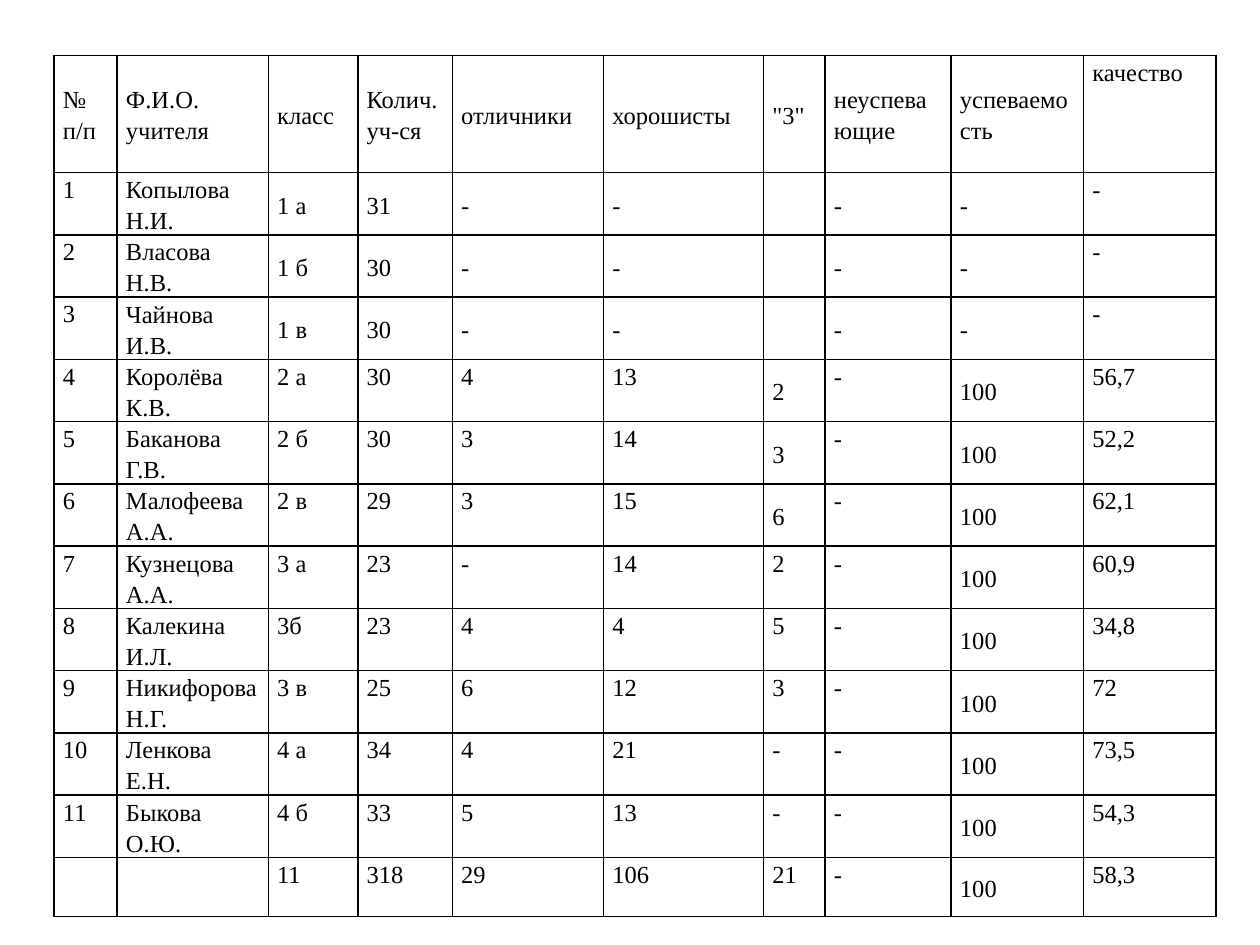
from pptx import Presentation
from pptx.dml.color import RGBColor
from pptx.enum.text import MSO_ANCHOR
from pptx.oxml import parse_xml
from pptx.oxml.ns import nsdecls
from pptx.util import Inches, Pt

# Content
HEADINGS = ("№ п/п", "Ф.И.О. учителя", "класс", "Колич. уч-ся", "отличники",
            "хорошисты", '"3"', "неуспевающие", "успеваемость", "качество")
CLASSES = [
    ("1", "Копылова Н.И.", "1 а", "31", "-", "-", "", "-", "-", "-"),
    ("2", "Власова Н.В.", "1 б", "30", "-", "-", "", "-", "-", "-"),
    ("3", "Чайнова И.В.", "1 в", "30", "-", "-", "", "-", "-", "-"),
    ("4", "Королёва К.В.", "2 а", "30", "4", "13", "2", "-", "100", "56,7"),
    ("5", "Баканова Г.В.", "2 б", "30", "3", "14", "3", "-", "100", "52,2"),
    ("6", "Малофеева А.А.", "2 в", "29", "3", "15", "6", "-", "100", "62,1"),
    ("7", "Кузнецова А.А.", "3 а", "23", "-", "14", "2", "-", "100", "60,9"),
    ("8", "Калекина И.Л.", "3б", "23", "4", "4", "5", "-", "100", "34,8"),
    ("9", "Никифорова Н.Г.", "3 в", "25", "6", "12", "3", "-", "100", "72"),
    ("10", "Ленкова Е.Н.", "4 а", "34", "4", "21", "-", "-", "100", "73,5"),
    ("11", "Быкова О.Ю.", "4 б", "33", "5", "13", "-", "-", "100", "54,3"),
]
TOTALS = ("", "", "11", "318", "29", "106", "21", "-", "100", "58,3")
ROWS = [HEADINGS, *CLASSES, TOTALS]

# Look and measures
THEME = {"font": "Times New Roman", "size": 14, "ink": "000000", "border": 1}
LEFT, TOP = 0.43, 0.44
COLUMN_WIDTHS = (0.5, 1.2, 0.71, 0.75, 1.2, 1.27, 0.49, 1, 1.05, 1.05)
HEADING_HEIGHT, ROW_HEIGHT = 0.93, 0.47


def middle_columns(row):
    """Columns whose text is centred vertically in the given row."""
    if row == 0:
        return range(0, 9)
    if row <= 3:
        return range(1, 9)
    return (6, 8) if row <= 6 else (8,)


def add_borders(cell):
    properties = cell._tc.get_or_add_tcPr()
    for side in ("lnL", "lnR", "lnT", "lnB"):
        properties.append(parse_xml(
            f'<a:{side} {nsdecls("a")} w="{Pt(THEME["border"])}"><a:solidFill>'
            f'<a:srgbClr val="{THEME["ink"]}"/></a:solidFill></a:{side}>'))


def write_cell(cell, text, *, anchor):
    cell.margin_left = cell.margin_right = Inches(0.07)
    cell.margin_top = cell.margin_bottom = 0
    cell.vertical_anchor = anchor
    para = cell.text_frame.paragraphs[0]
    para.line_spacing = 1.15
    para.space_after = Pt(10)
    para.font.size = Pt(THEME["size"])
    if text:
        span = para.add_run()
        span.text = text
        span.font.name = THEME["font"]
        span.font.size = Pt(THEME["size"])
        span.font.color.rgb = RGBColor.from_string(THEME["ink"])


def main():
    deck = Presentation()
    deck.slide_width, deck.slide_height = Inches(10), Inches(7.5)
    page = deck.slides.add_slide(deck.slide_layouts[6])

    # Table frame
    heights = [HEADING_HEIGHT] + [ROW_HEIGHT] * (len(ROWS) - 1)
    table = page.shapes.add_table(
        len(ROWS), len(HEADINGS), Inches(LEFT), Inches(TOP),
        Inches(sum(COLUMN_WIDTHS)), Inches(sum(heights))).table
    table.first_row = table.horz_banding = False
    for column, width in zip(table.columns, COLUMN_WIDTHS):
        column.width = Inches(width)
    for table_row, height in zip(table.rows, heights):
        table_row.height = Inches(height)

    # Cells
    for row, texts in enumerate(ROWS):
        for column, text in enumerate(texts):
            cell = table.cell(row, column)
            centred = column in middle_columns(row)
            write_cell(cell, text, anchor=MSO_ANCHOR.MIDDLE if centred else MSO_ANCHOR.TOP)
            add_borders(cell)
            cell.fill.background()

    deck.save("out.pptx")


if __name__ == "__main__":
    main()
